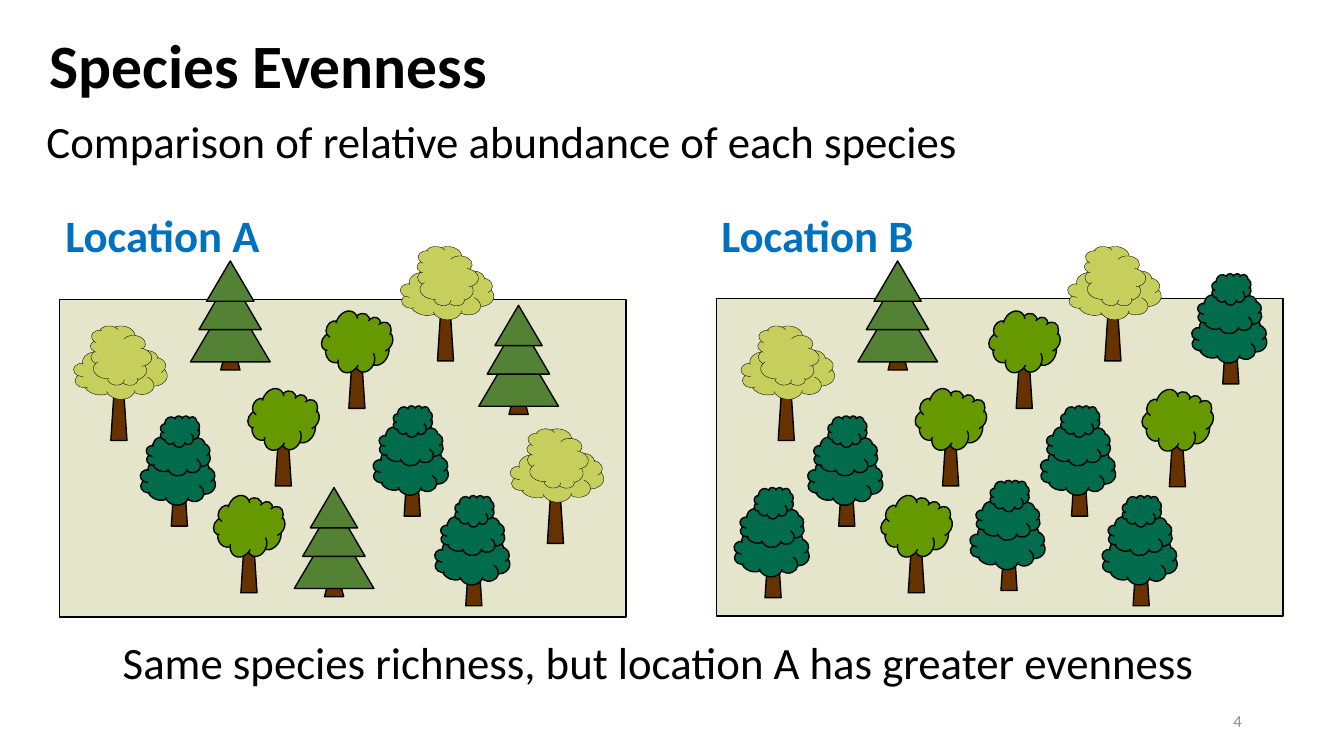
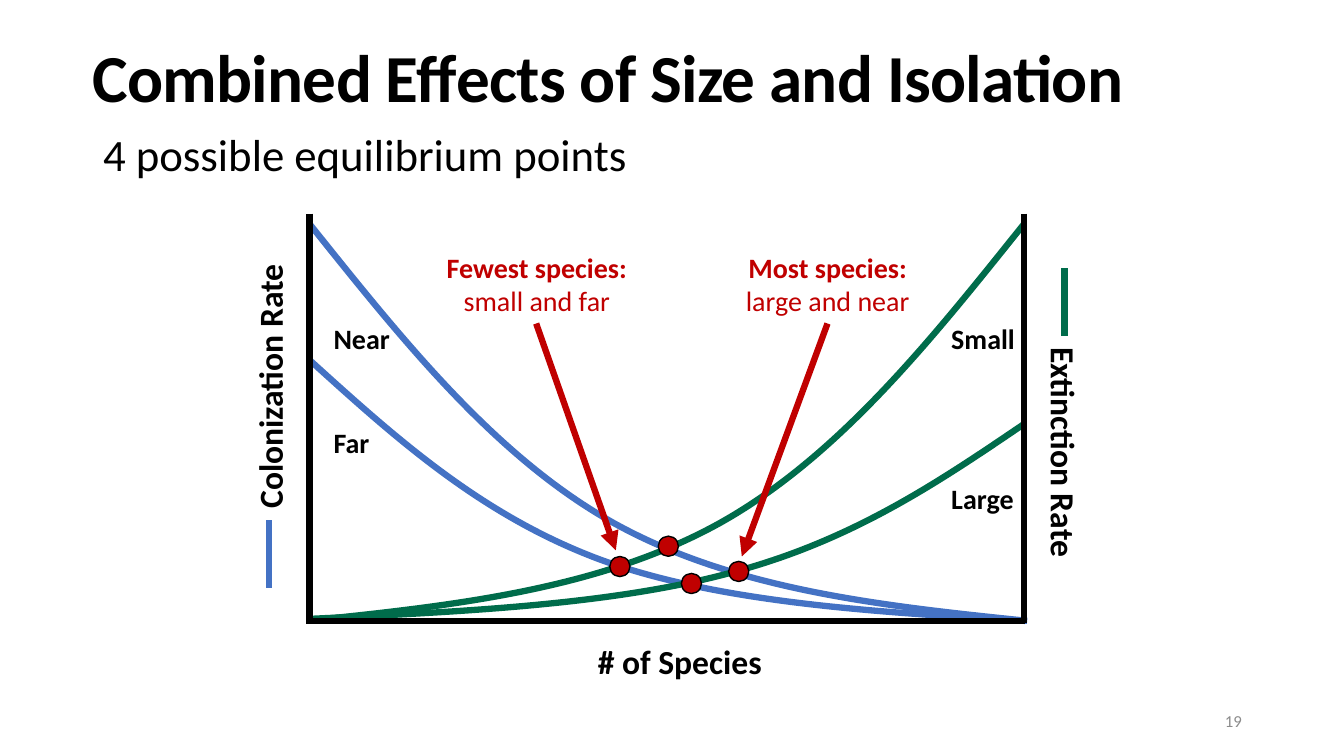
from dataclasses import dataclass

from lxml import etree
from pptx import Presentation
from pptx.dml.color import RGBColor
from pptx.enum import shapes, text
from pptx.oxml import ns
from pptx.util import Pt

SHAPE = shapes.MSO_SHAPE
ALIGN = text.PP_ALIGN


@dataclass(frozen=True)
class Theme:
    font: str = "Calibri"
    ink: str = "000000"
    muted: str = "8C8C8C"
    heading: str = "0070C0"
    accent: str = "C00000"
    colonization: str = "4472C4"
    extinction: str = "006C4B"
    ground: str = "808000"
    trunk: str = "663300"
    round_crown: str = "669900"
    spire_crown: str = "006C4B"
    pine_crown: str = "548235"
    pale_crown: str = "C6CF5C"
    body: int = 32
    axis: int = 24
    label: int = 20
    small: int = 12
    stroke: float = 4.5
    outline: float = 1


THEME = Theme()


@dataclass(frozen=True)
class Species:
    """A tree drawing; crown parts are (dx, dy, width, height, rotation) from the trunk's corner."""
    trunk: tuple
    crown_shape: int
    color: str
    crown: tuple
    outline: float = THEME.outline


TRUNK = (11.5, 43.9)
ROUND = Species(TRUNK, SHAPE.CLOUD, THEME.round_crown, ((-18.5, -25.6, 48.2, 45.4, 26.3),))
SPIRE = Species(TRUNK, SHAPE.CLOUD, THEME.spire_crown,
                ((-22.4, -4.9, 54, 33.8, 7.4), (-18.1, -20.9, 46.1, 28.8, 7.4),
                 (-7.9, -35.3, 28.1, 23, 7.4)))
PINE = Species((13.7, 13), SHAPE.ISOSCELES_TRIANGLE, THEME.pine_crown,
               ((-21.6, -41, 56.9, 48.2, 0), (-15.6, -54, 44.6, 38.2, 0),
                (-10.1, -64.9, 33.8, 28.8, 0)))
PALE = Species(TRUNK, SHAPE.CLOUD, THEME.pale_crown,
               ((-26.7, -21.6, 67, 36, 3.7), (-14.4, -38.9, 42.5, 44.6, 276.4)), 0.25)


def rgb(color):
    return RGBColor.from_string(color)


def add_xml(parent, tag, **attrs):
    return etree.SubElement(parent, ns.qn(tag), **attrs)


class Deck:
    def __init__(self, theme):
        self.theme = theme
        self.prs = Presentation()
        self.prs.slide_width, self.prs.slide_height = Pt(960), Pt(540)
        self.s = None

    def style(self, p, size, color, bold=False, align=ALIGN.LEFT):
        p.alignment = align
        for r in p.runs:
            r.font.name, r.font.size, r.font.bold = self.theme.font, Pt(size), bold
            r.font.color.rgb = rgb(color)

    def place(self, sp, x, y, w, h):
        sp.left, sp.top, sp.width, sp.height = Pt(x), Pt(y), Pt(w), Pt(h)

    def slide(self, number, title, title_box, title_size, subtitle, subtitle_box, spacing=0):
        self.s = self.prs.slides.add_slide(self.prs.slide_layouts[1])
        heading, body = self.s.placeholders
        for sp, box, words in ((heading, title_box, title), (body, subtitle_box, subtitle)):
            self.place(sp, *box)
            tf = sp.text_frame
            tf.text = words
            tf.word_wrap, tf.auto_size = True, text.MSO_AUTO_SIZE.NONE
            tf.vertical_anchor = text.MSO_ANCHOR.TOP
            tf.paragraphs[0].space_before = Pt(0)
        p = heading.text_frame.paragraphs[0]
        self.style(p, title_size, self.theme.ink, bold=True)
        p.line_spacing = 0.9
        p.runs[0].font._element.set("spc", str(spacing))
        p = body.text_frame.paragraphs[0]
        self.style(p, self.theme.body, self.theme.ink)
        p.space_after = Pt(12)
        pPr = p._p.get_or_add_pPr()
        pPr.set("marL", str(Pt(8)))
        pPr.set("indent", "0")
        add_xml(pPr, "a:buNone")
        sp = self.label(str(number), (678.2, 500.4, 216, 28.8), self.theme.small,
                        self.theme.muted, align=ALIGN.RIGHT, wrap=True)
        sp.text_frame.auto_size = text.MSO_AUTO_SIZE.NONE
        sp.text_frame.vertical_anchor = text.MSO_ANCHOR.MIDDLE

    def label(self, words, box, size, color=THEME.ink, bold=False, align=ALIGN.LEFT,
              wrap=False, rotation=0):
        sp = self.s.shapes.add_textbox(*map(Pt, box))
        sp.rotation = rotation
        tf = sp.text_frame
        tf.text = words
        tf.word_wrap, tf.auto_size = wrap, text.MSO_AUTO_SIZE.SHAPE_TO_FIT_TEXT
        self.style(tf.paragraphs[0], size, color, bold, align)
        return sp

    def callout(self, words, box):
        """A label whose first line is bold."""
        sp = self.label(words, box, self.theme.label, self.theme.accent, wrap=True)
        head, detail = sp.text_frame.paragraphs
        self.style(head, self.theme.label, self.theme.accent, True, ALIGN.CENTER)
        self.style(detail, self.theme.label, self.theme.accent, False, ALIGN.CENTER)

    def shape(self, kind, box, fill, outline=THEME.outline, rotation=0, opacity=100, parent=None):
        sp = (parent or self.s).shapes.add_shape(kind, *map(Pt, box))
        sp.shadow.inherit = False
        sp.rotation = rotation
        sp.fill.solid()
        sp.fill.fore_color.rgb = rgb(fill)
        if opacity < 100:
            color = sp._element.spPr.find(".//" + ns.qn("a:srgbClr"))
            add_xml(color, "a:alpha", val=str(opacity * 1000))
        sp.line.color.rgb = rgb(self.theme.ink)
        sp.line.width = Pt(outline)

    def tree(self, species, x, y):
        group = self.s.shapes.add_group_shape()
        self.shape(SHAPE.TRAPEZOID, (x, y, *species.trunk), self.theme.trunk, parent=group)
        for dx, dy, w, h, rotation in species.crown:
            self.shape(species.crown_shape, (x + dx, y + dy, w, h), species.color,
                       species.outline, rotation, parent=group)

    def line(self, start, end, color, arrow=False):
        sp = self.s.shapes.add_connector(shapes.MSO_CONNECTOR.STRAIGHT, *map(Pt, start + end))
        sp.line.color.rgb = rgb(color)
        sp.line.width = Pt(self.theme.stroke)
        if arrow:
            add_xml(sp._element.spPr.find(ns.qn("a:ln")), "a:tailEnd", type="triangle")
        add_xml(sp._element.spPr, "a:effectLst")

    def curve(self, points, color):
        """Cubic curves: a start, then two control points and an end for each."""
        outline = [(Pt(x), Pt(y)) for x, y in points]
        builder = self.s.shapes.build_freeform(*outline[0])
        builder.add_line_segments(outline[1:], close=False)
        sp = builder.convert_to_shape()
        steps = sp._element.spPr.findall(".//" + ns.qn("a:lnTo"))
        track = steps[0].getparent()
        for i in range(0, len(steps), 3):
            cubic = add_xml(track, "a:cubicBezTo")
            for step in steps[i:i + 3]:
                cubic.append(step[0])
                track.remove(step)
        sp.shadow.inherit = False
        sp.fill.background()
        sp.line.color.rgb = rgb(color)
        sp.line.width = Pt(self.theme.stroke)


def evenness(deck):
    t = deck.theme
    deck.slide(4, "Species Evenness", (28.1, 21.6, 689.8, 71.3), 44,
               "Comparison of relative abundance of each species", (18, 77.6, 823, 46))
    shared = ((ROUND, ((196.6, 303.2), (172.1, 379.5), (249.2, 247.8))),
              (SPIRE, ((332.7, 388.8), (288.7, 324.7), (122.4, 331.9))),
              (PINE, ((157.7, 251.3),)),
              (PALE, ((312.5, 213.9), (79.2, 270.7))))
    only_a = ((PINE, ((231.8, 413.2), (363.6, 283))), (PALE, ((391, 344.2),)))
    only_b = ((SPIRE, ((396.7, 230.3), (238.3, 377.9), (69.8, 383))), (ROUND, ((358.6, 303.8),)))
    locations = (("Location A", (39.6, 144.7, 155.5, 46), (42.5, 213.9), 0, only_a),
                 ("Location B", (508.2, 144.7, 154.1, 46), (511.8, 213.3), 476.7, only_b))
    for name, name_box, plot, shift, extra in locations:
        deck.shape(SHAPE.RECTANGLE, (*plot, 404.7, 226.8), t.ground, opacity=20)
        for species, spots in shared + extra:
            for x, y in spots:
                deck.tree(species, x + shift, y)
        deck.label(name, name_box, t.body, t.heading, bold=True)
    deck.label("Same species richness, but location A has greater evenness",
               (80.6, 450, 802.1, 46), t.body)


def equilibrium(deck):
    t = deck.theme
    deck.slide(19, "Combined Effects of Size and Isolation", (58.7, 28.1, 859.7, 71.3), 48,
               "4 possible equilibrium points", (58.4, 87.1, 637.2, 46), spacing=-50)
    left, right, top, base = 221, 731.6, 152.7, 443.5

    near = [(left, 159.8), (287.3, 242.6), (353.5, 326.2), (438.5, 373.7),
            (524.2, 421.2), (628.6, 432.7), (733.7, base)]
    small = [(left + right - x, y) for x, y in near]
    far = [(left, 257), (282.2, 312.5), (343.4, 367.9), (428.4, 399.6),
           (513.4, 430.6), (622.8, 437), (732.2, base)]
    large = [(732.2, 302.4), (671.8, 343.4), (610.6, 385.2), (525.6, 408.2),
             (439.9, 432), (330.5, 437), (left, 442.1)]
    for points, color in ((small, t.extinction), (near, t.colonization),
                          (far, t.colonization), (large, t.extinction)):
        deck.curve(points, color)

    deck.line((218.9, base), (732.2, base), t.ink)
    for x in (left, right):
        deck.line((x, top), (x, 445), t.ink)
    for x, y, color in ((192.2, 371.5, t.colonization), (760.3, 191.5, t.extinction)):
        deck.line((x, y), (x, y + 48.2), color)

    for x, y in ((470.2, 383), (435.6, 397.5), (486.7, 409.6), (520.5, 401)):
        deck.shape(SHAPE.OVAL, (x, y, 14.4, 14.4), t.accent)
    deck.line((591.1, 231.1), (529.9, 397.5), t.accent, arrow=True)
    deck.line((383, 231.1), (439.9, 393.1), t.accent, arrow=True)
    deck.callout("Fewest species:\nsmall and far", (286.6, 175.2, 193.7, 55.5))
    deck.callout("Most species:\nlarge and near", (511.3, 175.2, 159.8, 55.5))

    for words, x, y, w in (("Near", 231.2, 226.1, 55.4), ("Far", 231.2, 300.4, 40.3),
                           ("Small", 672.4, 226.1, 60.5), ("Large", 672.4, 340.2, 59.8)):
        deck.label(words, (x, y, w, 31.5), t.label, bold=True)
    for words, x, y, w, rotation in (("# of Species", 419, 454.4, 133.2, 0),
                                     ("Colonization Rate", 97.2, 257.9, 190.8, 270),
                                     ("Extinction Rate", 676.8, 304.8, 166.3, 90)):
        deck.label(words, (x, y, w, 36.3), t.axis, bold=True, align=ALIGN.CENTER,
                   rotation=rotation)


def main():
    deck = Deck(THEME)
    evenness(deck)
    equilibrium(deck)
    deck.prs.save("out.pptx")


if __name__ == "__main__":
    main()
